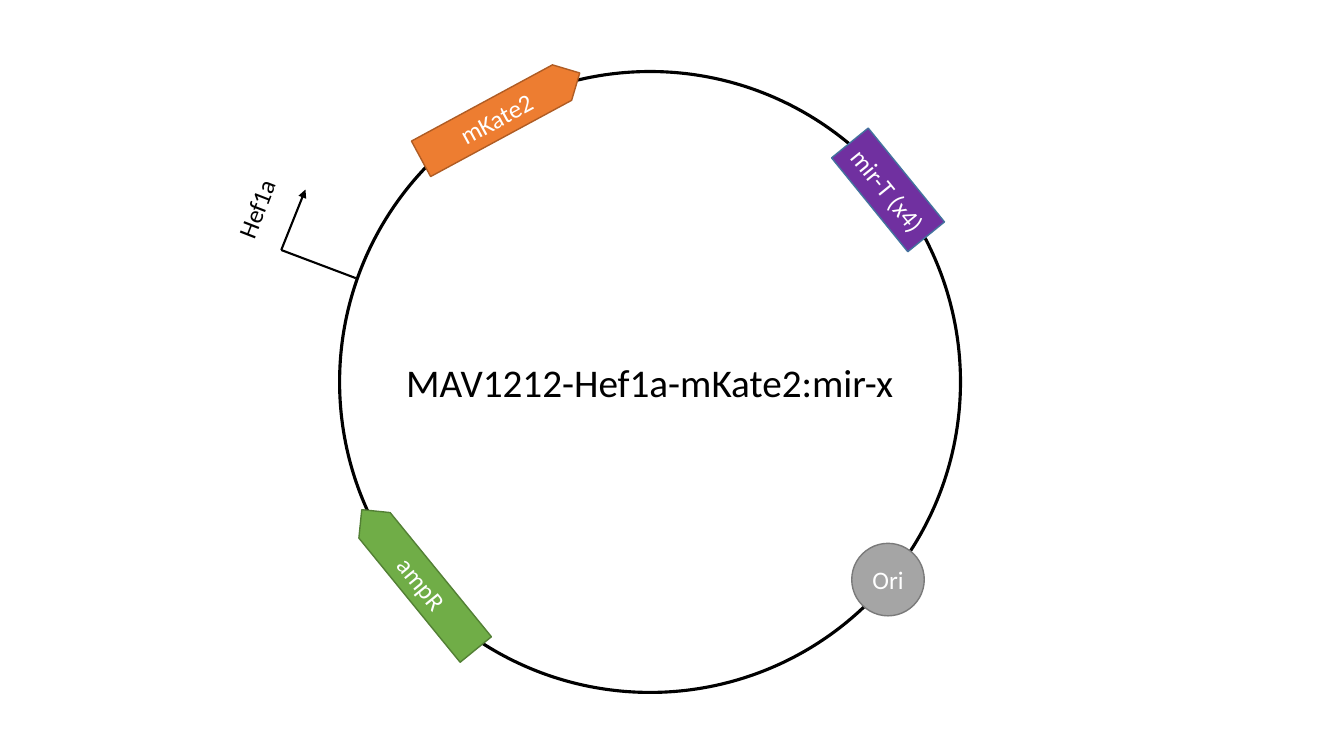
from dataclasses import dataclass
from typing import Optional

from lxml.etree import SubElement
from pptx import Presentation
from pptx.dml.color import RGBColor
from pptx.enum.shapes import MSO_CONNECTOR, MSO_SHAPE
from pptx.enum.text import MSO_ANCHOR, PP_ALIGN
from pptx.oxml.ns import qn
from pptx.util import Pt

COLORS = {
    "black": "000000", "white": "FFFFFF",
    "green": "70AD47", "green_edge": "538035",
    "gray": "A5A5A5", "gray_edge": "7A7A7A",
    "orange": "ED7D31", "orange_edge": "AF5C24",
    "purple": "7030A0", "blue_edge": "43739E",
}


@dataclass
class Feature:
    """A part of the plasmid map; sizes in points."""
    kind: MSO_SHAPE
    left: float
    top: float
    width: float
    height: float
    edge: str
    fill: Optional[str] = None
    text: str = ""
    rotation: float = 0
    flip: bool = False
    weight: float = 1


@dataclass
class Label:
    text: str
    left: float
    top: float
    width: float
    height: float
    size: float
    rotation: float = 0


BACKBONE = Feature(MSO_SHAPE.OVAL, 242.6, 51.1, 443.5, 443.5, "black", weight=2.25)
AMP_R = Feature(MSO_SHAPE.PENTAGON, 234.7, 399.6, 128.9, 28.8, "green_edge", "green",
                "ampR", 50.8, True)
ORI = Feature(MSO_SHAPE.OVAL, 608.4, 388.1, 51.8, 51.8, "gray_edge", "gray", "Ori")
MKATE2 = Feature(MSO_SHAPE.PENTAGON, 293, 68.4, 128.9, 28.8, "orange_edge", "orange",
                 "mKate2", 331.6)
MIR_T = Feature(MSO_SHAPE.RECTANGLE, 591.1, 118.8, 86.4, 33.8, "blue_edge", "purple",
                "mir-T (x4)", 50.9)
TITLE = Label("MAV1212-Hef1a-mKate2:mir-x", 267.1, 252.7, 393.8, 41.2, 28)
PROMOTER = Label("Hef1a", 103.7, 134.6, 158.4, 28.8, 18, 291.3)

PROMOTER_CORNER = (200.9, 178.6)
PROMOTER_TIP = (218.2, 135.4)
PROMOTER_BASE = (254.2, 198.7)


def rgb(name: str) -> RGBColor:
    return RGBColor.from_string(COLORS[name])


def write(sp, text: str, size: float, color: str, frame: dict) -> None:
    tf = sp.text_frame
    for name, value in frame.items():
        setattr(tf, name, value)
    p = tf.paragraphs[0]
    p.alignment = PP_ALIGN.CENTER
    r = p.add_run()
    r.text = text
    for name, value in {"name": "Calibri", "size": Pt(size)}.items():
        setattr(r.font, name, value)
    r.font.color.rgb = rgb(color)


def add_feature(s, f: Feature) -> None:
    sp = s.shapes.add_shape(f.kind, Pt(f.left), Pt(f.top), Pt(f.width), Pt(f.height))
    sp.shadow.inherit = False
    sp.rotation = f.rotation
    if f.flip:
        sp._element.spPr.find(qn("a:xfrm")).set("flipH", "1")
    if f.fill:
        sp.fill.solid()
        sp.fill.fore_color.rgb = rgb(f.fill)
    else:
        sp.fill.background()
    sp.line.color.rgb = rgb(f.edge)
    sp.line.width = Pt(f.weight)
    if f.text:
        write(sp, f.text, 18, "white",
              {"word_wrap": False, "vertical_anchor": MSO_ANCHOR.MIDDLE})


def add_label(s, label: Label) -> None:
    sp = s.shapes.add_textbox(Pt(label.left), Pt(label.top),
                              Pt(label.width), Pt(label.height))
    sp.rotation = label.rotation
    write(sp, label.text, label.size, "black", {"word_wrap": True})


def add_line(s, start: tuple[float, float], end: tuple[float, float],
             arrow: bool = False) -> None:
    points = [Pt(v) for v in (*start, *end)]
    sp = s.shapes.add_connector(MSO_CONNECTOR.STRAIGHT, *points)
    sp.line.color.rgb = rgb("black")
    sp.line.width = Pt(1.5)
    if arrow:
        SubElement(sp.line._get_or_add_ln(), qn("a:tailEnd"), type="triangle")
    SubElement(sp._element.spPr, qn("a:effectLst"))


def main() -> None:
    prs = Presentation()
    prs.slide_width, prs.slide_height = Pt(960), Pt(540)
    s = prs.slides.add_slide(prs.slide_layouts[6])

    # Plasmid ring, its features and name
    for feature in (BACKBONE, AMP_R, ORI):
        add_feature(s, feature)
    add_label(s, TITLE)
    add_feature(s, MKATE2)

    # Promoter arrow
    add_line(s, PROMOTER_CORNER, PROMOTER_TIP, arrow=True)
    add_line(s, PROMOTER_CORNER, PROMOTER_BASE)
    add_label(s, PROMOTER)

    # Target sites
    add_feature(s, MIR_T)
    prs.save("out.pptx")


if __name__ == "__main__":
    main()
